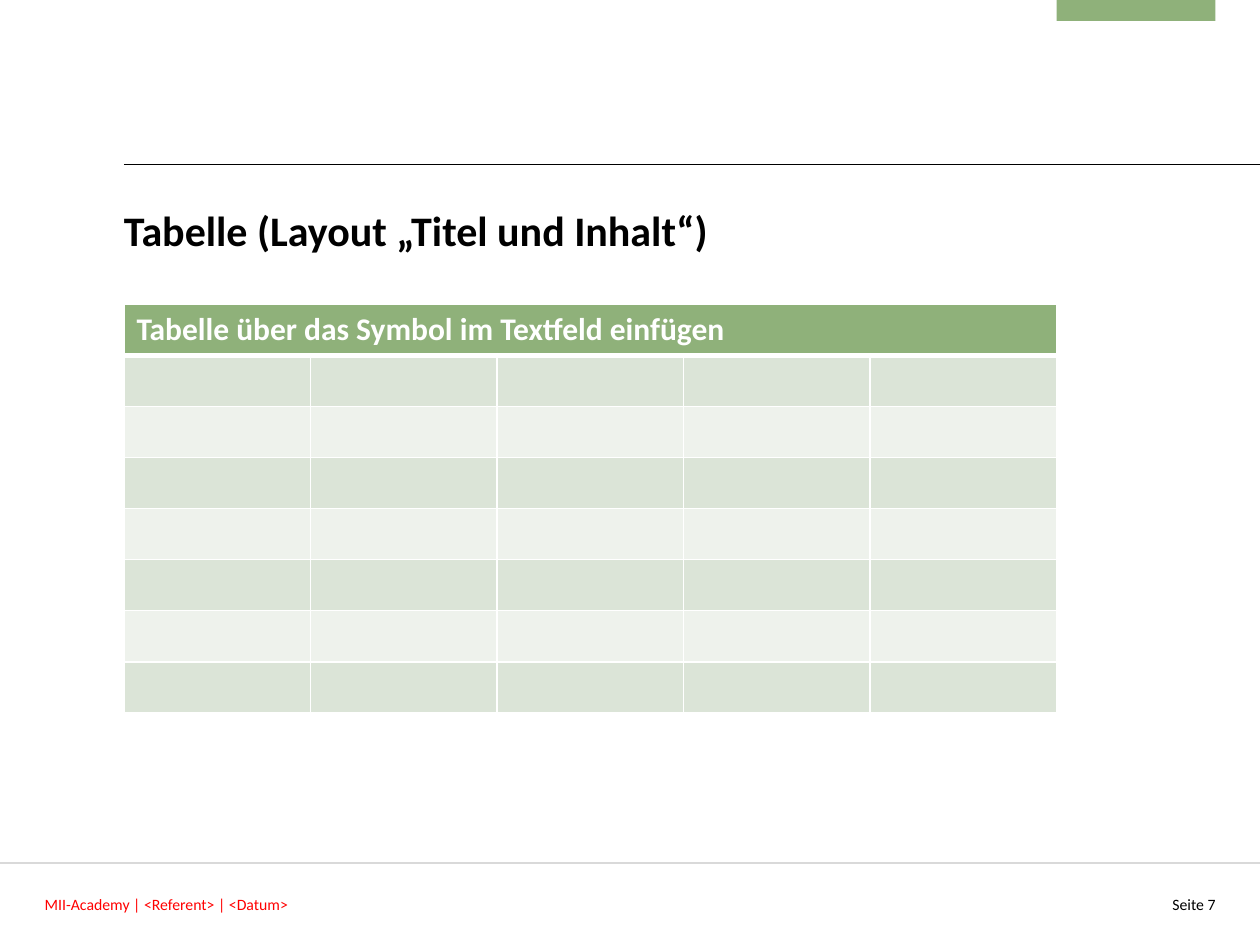
import pptx
import pptx.util
import pptx.dml.color
import pptx.enum.shapes
import pptx.enum.text
import pptx.oxml.ns
from lxml import etree

Pt = pptx.util.Pt
ALIGN = pptx.enum.text.PP_ALIGN
ANCHOR = pptx.enum.text.MSO_ANCHOR

# Content
FONT = "Calibri"
GREEN, WHITE, BLACK = "8FB17A", "FFFFFF", "000000"
BANDS = ("DBE4D7", "EEF2EC")
TITLE = "Tabelle (Layout „Titel und Inhalt“)"
TABLE_HEADING = "Tabelle über das Symbol im Textfeld einfügen"
ROWS, COLUMNS = 8, 5
ROW_HEIGHT = 29.16
LEFT, CONTENT_WIDTH = 70.8, 532.8

# left, right, height on the slide, colour
RULES = [(LEFT, 720, 94, BLACK), (0, 720, 493.2, "D9D9D9")]
# text, left, width, alignment, colour
FOOTERS = [
    ("Seite 7", 643, 51.6, ALIGN.RIGHT, BLACK),
    ("MII-Academy | <Referent> | <Datum>", 25.5, 578, ALIGN.LEFT, "FF0000"),
]


def rgb(value):
    return pptx.dml.color.RGBColor.from_string(value)


def write(frame, text, size, color, bold=False, align=ALIGN.LEFT):
    paragraph = frame.paragraphs[0]
    paragraph.alignment = align
    run = paragraph.add_run()
    run.text = text
    run.font.name, run.font.size, run.font.bold = FONT, Pt(size), bold
    run.font.color.rgb = rgb(color)


def set_box(frame, top_inset=0):
    frame.word_wrap = True
    frame.auto_size = pptx.enum.text.MSO_AUTO_SIZE.NONE
    frame.vertical_anchor = ANCHOR.TOP
    frame.margin_left = frame.margin_right = frame.margin_bottom = 0
    frame.margin_top = Pt(top_inset)


def set_borders(cell, widths):
    properties = cell._tc.get_or_add_tcPr()
    for side, width in zip("LRTB", widths):
        border = etree.SubElement(properties, pptx.oxml.ns.qn(f"a:ln{side}"), w=str(Pt(width)))
        fill = etree.SubElement(border, pptx.oxml.ns.qn("a:solidFill"))
        etree.SubElement(fill, pptx.oxml.ns.qn("a:srgbClr"), val=WHITE)


presentation = pptx.Presentation()
presentation.slide_width, presentation.slide_height = Pt(720), Pt(540)
slide = presentation.slides.add_slide(presentation.slide_layouts[5])
shapes = slide.shapes

# Rules and corner mark
for left, right, y, color in RULES:
    rule = shapes.add_connector(
        pptx.enum.shapes.MSO_CONNECTOR.STRAIGHT, Pt(left), Pt(y), Pt(right), Pt(y))
    rule.line.color.rgb = rgb(color)
    rule.line.width = Pt(0.75)
    etree.SubElement(rule._element.spPr, pptx.oxml.ns.qn("a:effectLst"))

corner_mark = shapes.add_shape(
    pptx.enum.shapes.MSO_SHAPE.RECTANGLE, Pt(603.8), Pt(0), Pt(90.7), Pt(12))
corner_mark.shadow.inherit = False
corner_mark.fill.solid()
corner_mark.fill.fore_color.rgb = rgb(GREEN)
corner_mark.line.fill.background()

# Title
title = shapes.title
title.left, title.top = Pt(LEFT), Pt(116.6)
title.width, title.height = Pt(CONTENT_WIDTH), Pt(45.4)
set_box(title.text_frame)
write(title.text_frame, TITLE, 24, BLACK, bold=True)

# Table: one merged heading row above banded empty rows
table = shapes.add_table(
    ROWS, COLUMNS, Pt(LEFT), Pt(173.8), Pt(CONTENT_WIDTH), Pt(ROWS * ROW_HEIGHT)).table
for column in table.columns:
    column.width = Pt(CONTENT_WIDTH / COLUMNS)
table.cell(0, 0).merge(table.cell(0, COLUMNS - 1))
for index, row in enumerate(table.rows):
    row.height = Pt(ROW_HEIGHT)
    for cell in row.cells:
        set_borders(cell, (1, 1, 3 if index == 1 else 1, 3 if index == 0 else 1))
        cell.fill.solid()
        cell.fill.fore_color.rgb = rgb(BANDS[(index - 1) % 2] if index else GREEN)
write(table.cell(0, 0).text_frame, TABLE_HEADING, 18, WHITE, bold=True)

# Footer
for text, left, width, align, color in FOOTERS:
    footer = shapes.add_textbox(Pt(left), Pt(508.3), Pt(width), Pt(18.7))
    set_box(footer.text_frame, top_inset=2.9)
    write(footer.text_frame, text, 9, color, align=align)

presentation.save("out.pptx")
